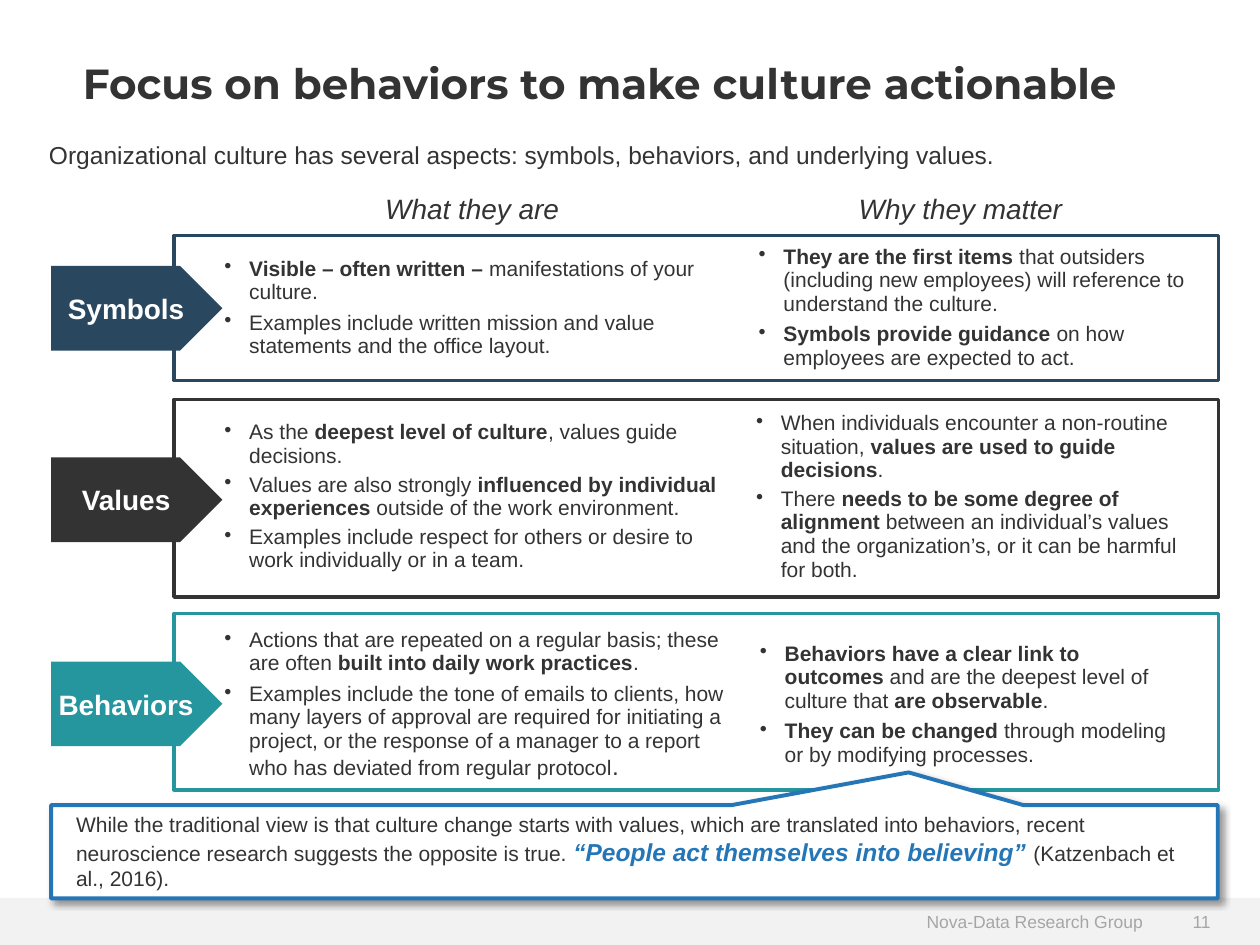
from dataclasses import dataclass

from lxml.etree import SubElement
from pptx import Presentation
from pptx.dml.color import RGBColor
from pptx.enum.shapes import MSO_SHAPE
from pptx.enum.text import MSO_ANCHOR, PP_ALIGN
from pptx.oxml.ns import qn
from pptx.util import Pt


@dataclass(frozen=True)
class Theme:
    ink: str = "333333"
    navy: str = "29475F"
    teal: str = "25969E"
    blue: str = "2576B7"
    white: str = "FFFFFF"
    band: str = "F2F2F2"
    muted: str = "A6A6A6"
    body_font: str = "Arial"
    title_font: str = "Montserrat"
    title: int = 24
    heading: int = 16
    lead: int = 14
    body: int = 12
    footer: int = 10
    plain_table: str = "{2D5ABB26-0587-4C30-8999-92F81FD0307C}"


class Page:
    def __init__(self, deck, theme):
        self.theme = theme
        self.shapes = deck.slides.add_slide(deck.slide_layouts[6]).shapes

    def style(self, font, size, color=None, name=None, bold=False, italic=False):
        font.name = name or self.theme.body_font
        font.size = Pt(size)
        font.bold = bold
        font.italic = italic
        font.color.rgb = RGBColor.from_string(color or self.theme.ink)

    def add_words(self, para, text, size, align=PP_ALIGN.LEFT, **look):
        para.alignment = align
        self.style(para.font, size, **look)
        for index, part in enumerate(text.split("**")):
            if part:
                span = para.add_run()
                span.text = part
                self.style(span.font, size, **look)
                if index % 2:
                    span.font.bold = True

    def indent(self, para, margin, hanging=0):
        properties = para._p.get_or_add_pPr()
        properties.set("marL", str(Pt(margin)))
        properties.set("indent", str(Pt(-hanging)))
        return properties

    def text(self, area, text, size, **look):
        frame = self.shapes.add_textbox(*map(Pt, area)).text_frame
        frame.word_wrap = True
        self.add_words(frame.paragraphs[0], text, size, **look)

    def shape(self, kind, area, fill=None, line=None, weight=2):
        box = self.shapes.add_shape(kind, *map(Pt, area))
        box.shadow.inherit = False
        if fill:
            box.fill.solid()
            box.fill.fore_color.rgb = RGBColor.from_string(fill)
        else:
            box.fill.background()
        if line:
            box.line.color.rgb = RGBColor.from_string(line)
            box.line.width = Pt(weight)
        else:
            box.line.fill.background()
        return box

    def footer(self, left, width, text, margin, align):
        box = self.shape(MSO_SHAPE.RECTANGLE, (left, 513, width, 27), self.theme.band)
        para = box.text_frame.paragraphs[0]
        self.add_words(para, text, self.theme.footer, align, color=self.theme.muted)
        self.indent(para, margin)

    def arrow(self, top, text, color):
        box = self.shape(MSO_SHAPE.PENTAGON, (29.2, top, 97.9, 48.4), color)
        frame = box.text_frame
        frame.margin_left = frame.margin_right = Pt(2.9)
        self.add_words(frame.paragraphs[0], text, self.theme.heading, PP_ALIGN.CENTER,
                       color=self.theme.white, bold=True)

    def table(self, left, top, height, widths):
        table = self.shapes.add_table(
            1, len(widths), Pt(left), Pt(top), Pt(sum(widths)), Pt(height)).table
        table.first_row = table.horz_banding = False
        table._tbl.tblPr.find(qn("a:tableStyleId")).text = self.theme.plain_table
        table.rows[0].height = Pt(height)
        for column, width in zip(table.columns, widths):
            column.width = Pt(width)
        for cell in table.rows[0].cells:
            cell.fill.background()
        return table.rows[0].cells

    def headings(self, left, top, height, widths, labels):
        for cell, label in zip(self.table(left, top, height, widths), labels):
            self.add_words(cell.text_frame.paragraphs[0], label, self.theme.heading,
                           PP_ALIGN.CENTER, italic=True)

    def bullets(self, left, top, height, widths, columns, gap):
        cells = self.table(left, top, height, widths)
        for cell, items in zip(cells, columns):
            cell.vertical_anchor = MSO_ANCHOR.MIDDLE
            frame = cell.text_frame
            for index, item in enumerate(items):
                para = frame.add_paragraph() if index else frame.paragraphs[0]
                para.space_after = Pt(gap)
                self.add_words(para, item, self.theme.body)
                properties = self.indent(para, 14.2, 14.2)
                bullet = properties.makeelement(qn("a:buChar"), {"char": "•"})
                properties.find(qn("a:defRPr")).addprevious(bullet)
        return cells

    def callout(self, area, tip, before, quote, after):
        theme = self.theme
        box = self.shape(MSO_SHAPE.RECTANGULAR_CALLOUT, area, theme.white, theme.blue, 2.25)
        box.adjustments[0], box.adjustments[1] = tip
        effects = box._element.spPr.find(qn("a:effectLst"))
        shadow = SubElement(effects, qn("a:outerShdw"), blurRad=str(Pt(4)),
                            dist=str(Pt(3)), dir="2700000", algn="tl", rotWithShape="0")
        color = SubElement(shadow, qn("a:srgbClr"), val="000000")
        SubElement(color, qn("a:alpha"), val="40000")
        box.text_frame.vertical_anchor = MSO_ANCHOR.TOP
        para = box.text_frame.paragraphs[0]
        self.add_words(para, before, theme.body)
        self.add_words(para, quote, theme.lead, color=theme.blue, bold=True, italic=True)
        self.add_words(para, after, theme.body)
        self.indent(para, 7.2)


def main():
    deck = Presentation()
    deck.slide_width, deck.slide_height = Pt(720), Pt(540)
    theme = Theme()
    page = Page(deck, theme)

    page.footer(0, 660, "Nova-Data Research Group", 20.9, PP_ALIGN.RIGHT)
    page.footer(660, 60, "11", 14.4, PP_ALIGN.LEFT)
    page.text((40.3, 29.5, 640, 67.7), "Focus on behaviors to make culture actionable",
              theme.title, name=theme.title_font, bold=True)
    page.text((20.9, 76.3, 658.8, 24.5),
              "Organizational culture has several aspects: symbols, behaviors, "
              "and underlying values.", theme.lead)
    page.headings(130.3, 107.3, 29.5, (279, 279), ("What they are", "Why they matter"))

    aspects = [
        ("Symbols", theme.navy, (134.6, 82.8), 151.9, (125.3, 100.8), (305.3, 268.6), 4, (
            ("**Visible – often written –** manifestations of your culture.",
             "Examples include written mission and value statements and the office layout."),
            ("**They are the first items **that outsiders (including new employees) "
             "will reference to understand the culture.",
             "**Symbols provide guidance **on how employees are expected to act."))),
        ("Values", theme.ink, (228.2, 113), 261.4, (228.2, 100.8), (303.8, 269.3), 3, (
            ("As the **deepest level of culture**, values guide decisions.",
             "Values are also strongly **influenced by individual experiences** "
             "outside of the work environment.",
             "Examples include respect for others or desire to work individually "
             "or in a team."),
            ("When individuals encounter a non-routine situation, "
             "**values are used to guide decisions**.",
             "There **needs to be some degree of alignment **between an individual’s "
             "values and the organization’s, or it can be harmful for both."))),
        ("Behaviors", theme.teal, (350.6, 100.8), 378, (337, 131), (306, 256.3), 4, (
            ("Actions that are repeated on a regular basis; these are often "
             "**built into daily work practices**.",
             "Examples include the tone of emails to clients, how many layers of approval "
             "are required for initiating a project, or the response of a manager to a "
             "report who has deviated from regular protocol"),
            ("**Behaviors have a clear link to outcomes **and are the deepest level of "
             "culture that **are observable**.",
             "**They can be changed** through modeling or by modifying processes."))),
    ]
    for label, color, (top, height), arrow_top, table_rows, widths, gap, columns in aspects:
        page.shape(MSO_SHAPE.RECTANGLE, (99.4, top, 596.9, height), line=color)
        cells = page.bullets(121, *table_rows, widths, columns, gap)
        page.arrow(arrow_top, label, color)
    page.add_words(cells[0].text_frame.paragraphs[-1], ".", theme.lead)

    page.callout((29.2, 460.1, 666.7, 53.3), (0.235, -0.851),
                 "While the traditional view is that culture change starts with values, "
                 "which are translated into behaviors, recent neuroscience research "
                 "suggests the opposite is true. ",
                 "“People act themselves into believing” ", "(Katzenbach et al., 2016).")
    deck.save("out.pptx")


if __name__ == "__main__":
    main()
